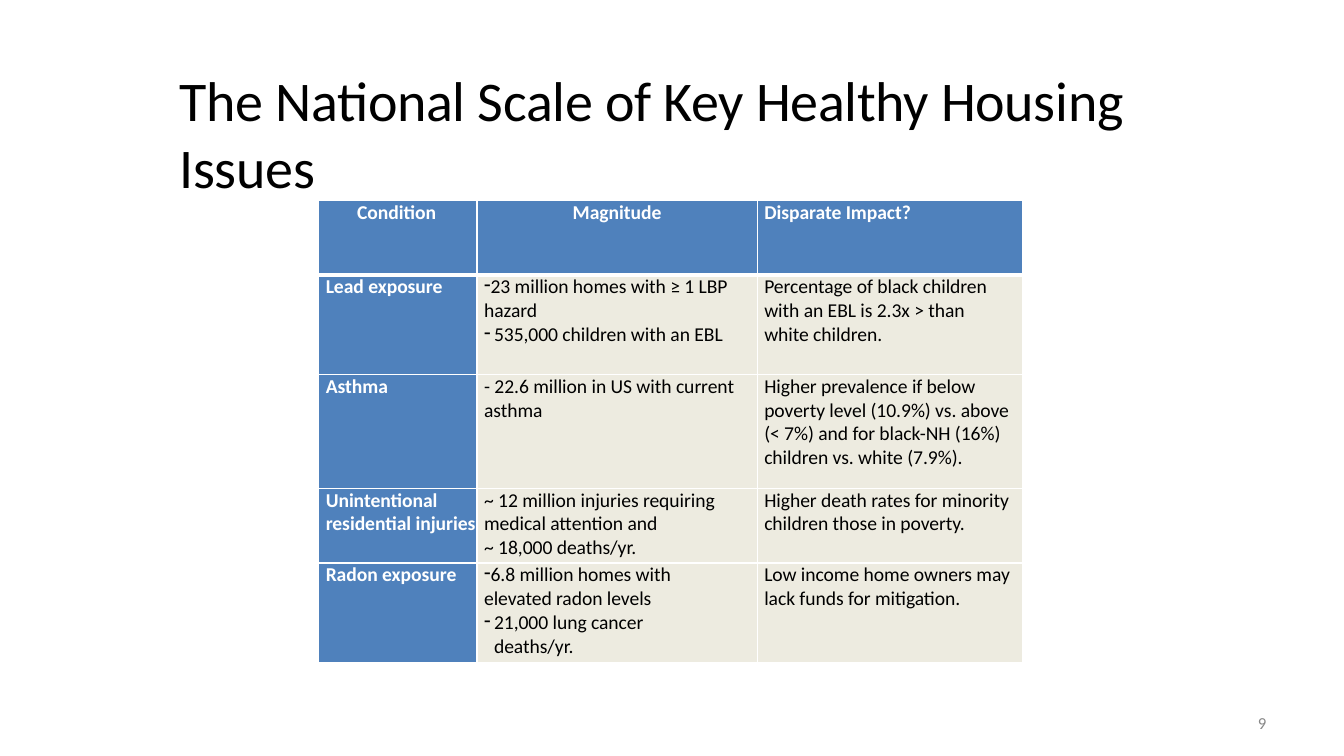
from dataclasses import dataclass

from lxml import etree
from pptx import Presentation
from pptx import util as u
from pptx.dml import color
from pptx.enum import text
from pptx.oxml import ns

HUES = {"ink": "000000", "white": "FFFFFF", "blue": "4F81BC",
        "sand": "EDEBE0", "gray": "888888"}
FONT = "Calibri"
PAD = 0.18    # usual left indent in a cell, cm
HANG = -0.25  # pull of a hanging dash, cm


@dataclass
class Para:
    words: str
    left: float = PAD
    right: float = 0
    pull: float = 0
    dash: bool = False
    mid: bool = False


@dataclass
class Style:
    size: float
    hue: str
    bold: bool = False
    space: int = 0  # letter spacing, 1/100 pt


@dataclass
class Box:
    at: tuple[float, float, float, float]
    top: float
    anchor: text.MSO_ANCHOR
    para: Para
    style: Style


def rgb(name: str) -> color.RGBColor:
    return color.RGBColor.from_string(HUES[name])


def apply(thing: object, values: dict) -> None:
    for key, value in values.items():
        setattr(thing, key, value)


def write(frame, paras: list[Para], style: Style) -> None:
    for i, item in enumerate(paras):
        para = frame.paragraphs[0] if i == 0 else frame.add_paragraph()
        if item.mid:
            para.alignment = text.PP_ALIGN.CENTER
        props = para._p.get_or_add_pPr()
        for key, size in {"marL": item.left, "marR": item.right,
                          "indent": item.pull}.items():
            props.set(key, str(int(u.Cm(size))))
        if item.dash:
            etree.SubElement(props, ns.qn("a:buChar")).set("char", "-")
        run = para.add_run()
        run.text = item.words
        apply(run.font, {"name": FONT, "size": u.Pt(style.size),
                         "bold": style.bold})
        run.font.color.rgb = rgb(style.hue)
        run._r.get_or_add_rPr().set("spc", str(style.space))


def edge(cell, side: str, width: float) -> None:
    props = cell._tc.get_or_add_tcPr()
    line = etree.SubElement(props, ns.qn(f"a:ln{side}"))
    line.set("w", str(int(u.Pt(width))))
    fill = etree.SubElement(line, ns.qn("a:solidFill"))
    etree.SubElement(fill, ns.qn("a:srgbClr")).set("val", HUES["white"])


def draw_box(slide, box: Box) -> None:
    frame = slide.shapes.add_textbox(*map(u.Cm, box.at)).text_frame
    apply(frame, {"margin_left": 0, "margin_right": 0, "margin_bottom": 0,
                  "margin_top": u.Cm(box.top), "word_wrap": True,
                  "auto_size": text.MSO_AUTO_SIZE.SHAPE_TO_FIT_TEXT,
                  "vertical_anchor": box.anchor})
    write(frame, [box.para], box.style)


# Title and page number
BOXES = [
    Box((2.34, 1.02, 29.21, 3.68), 0.97, text.MSO_ANCHOR.MIDDLE,
        Para("The National Scale of Key Healthy Housing Issues", 2.18),
        Style(40, "ink", space=-20)),
    Box((31.67, 17.96, 0.28, 0.48), 0, text.MSO_ANCHOR.TOP,
        Para("9", 0.03), Style(12, "gray")),
]

# Table content and sizes
COLS = [3.99, 7.06, 6.68]
ROWS = [1.88, 2.51, 2.87, 1.88, 2.51]
CELLS = [
    [[Para("Condition", 0.97)],
     [Para("Magnitude", 0, mid=True)],
     [Para("Disparate Impact?")]],
    [[Para("Lead exposure")],
     [Para("23 million homes with ≥ 1 LBP hazard", dash=True),
      Para("535,000 children with an EBL", PAD - HANG, 0, HANG, True)],
     [Para("Percentage of black children with an EBL is 2.3x > than "
           "white children.", right=0.4)]],
    [[Para("Asthma")],
     [Para("- 22.6 million in US with current asthma")],
     [Para("Higher prevalence if below poverty level (10.9%) vs. above "
           "(< 7%) and for black-NH (16%) children vs. white (7.9%).")]],
    [[Para("Unintentional residential injuries")],
     [Para("~ 12 million injuries requiring medical attention and"),
      Para("~ 18,000 deaths/yr.")],
     [Para("Higher death rates for minority children those in poverty.")]],
    [[Para("Radon exposure")],
     [Para("6.8 million homes with elevated radon levels", right=1.5,
           dash=True),
      Para("21,000 lung cancer deaths/yr.", PAD - HANG, 1.5, HANG, True)],
     [Para("Low income home owners may lack funds for mitigation.")]],
]


def draw_table(slide) -> None:
    grid = slide.shapes.add_table(
        len(ROWS), len(COLS), u.Cm(8.03), u.Cm(5.05),
        u.Cm(sum(COLS)), u.Cm(sum(ROWS))).table
    apply(grid, {"first_row": False, "horz_banding": False})
    for col, width in zip(grid.columns, COLS):
        col.width = u.Cm(width)
    for r, (row, high) in enumerate(zip(CELLS, ROWS)):
        grid.rows[r].height = u.Cm(high)
        for c, paras in enumerate(row):
            cell = grid.cell(r, c)
            head = r == 0 or c == 0
            apply(cell, {"margin_left": 0, "margin_right": 0,
                         "margin_top": 0, "margin_bottom": 0})
            for side, width in {"L": 1, "R": 1, "T": 3 if r == 1 else 1,
                                "B": 3 if r == 0 else 1}.items():
                edge(cell, side, width)
            cell.fill.solid()
            cell.fill.fore_color.rgb = rgb("blue" if head else "sand")
            write(cell.text_frame, paras,
                  Style(14, "white" if head else "ink", head, -5))


def main() -> None:
    deck = Presentation()
    apply(deck, {"slide_width": u.Cm(33.87), "slide_height": u.Cm(19.05)})
    slide = deck.slides.add_slide(deck.slide_layouts[6])
    for box in BOXES:
        draw_box(slide, box)
    draw_table(slide)
    deck.save("out.pptx")


if __name__ == "__main__":
    main()
